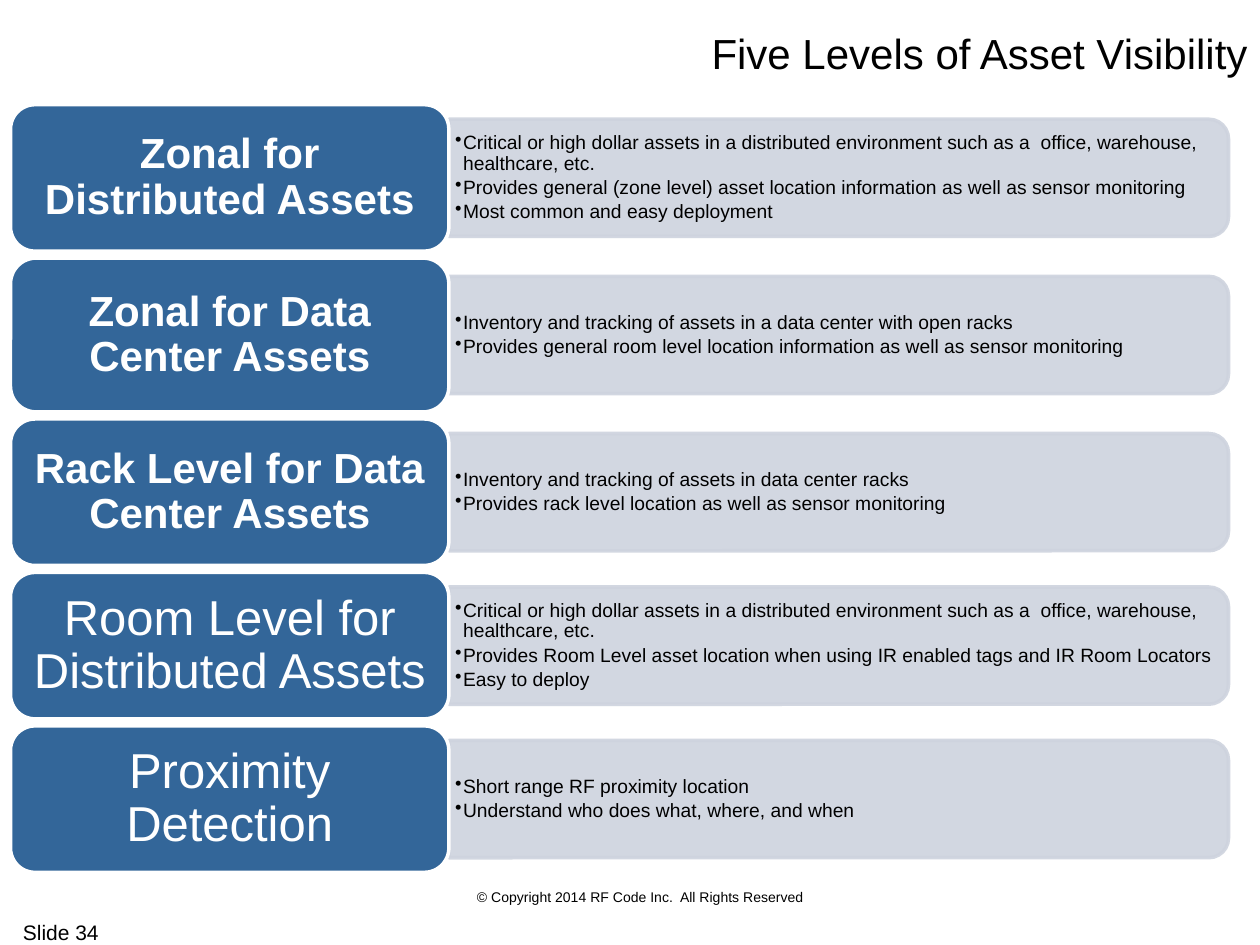
import pptx
import pptx.dml.color
import pptx.enum.shapes
import pptx.enum.text
import pptx.oxml.ns
import pptx.util
from lxml import etree

Pt = pptx.util.Pt
SHAPES = pptx.enum.shapes.MSO_SHAPE
ALIGN = pptx.enum.text.PP_ALIGN
ANCHOR = pptx.enum.text.MSO_ANCHOR
qn = pptx.oxml.ns.qn

CRITICAL = ("Critical or high dollar assets in a distributed environment "
            "such as a  office, warehouse, healthcare, etc.")
# heading, heading size, bold, box height, bullets
LEVELS = [
    ("Zonal for Distributed Assets", 24, True, 83.7, [
        CRITICAL,
        "Provides general (zone level) asset location information as well as sensor monitoring",
        "Most common and easy deployment"]),
    ("Zonal for Data Center Assets", 24, True, 87.9, [
        "Inventory and tracking of assets in a data center with open racks",
        "Provides general room level location information as well as sensor monitoring"]),
    ("Rack Level for Data Center Assets", 24, True, 83.7, [
        "Inventory and tracking of assets in data center racks",
        "Provides rack level location as well as sensor monitoring"]),
    ("Room Level for Distributed Assets", 28, False, 83.7, [
        CRITICAL,
        "Provides Room Level asset location when using IR enabled tags and IR Room Locators",
        "Easy to deploy"]),
    ("Proximity Detection", 28, False, 83.7, [
        "Short range RF proximity location",
        "Understand who does what, where, and when"]),
]
TOP, GAP = 59.8, 4
BOX_X, BOX_W = 6, 250.5
PANEL_X, PANEL_W, PANEL_H = 256.5, 445.5, 67


def rgb(value):
    return pptx.dml.color.RGBColor.from_string(value)


class Deck:
    font = "Arial"
    black, white, blue, grey = "000000", "FFFFFF", "336699", "CED3DE"

    def __init__(self, slide):
        self.s = slide

    def text(self, x, y, w, h, paragraphs, size, color=black, bold=False,
             align=ALIGN.LEFT, anchor=ANCHOR.TOP, inset=(7.2, 3.6),
             spacing=None, bullets=False):
        tf = self.s.shapes.add_textbox(Pt(x), Pt(y), Pt(w), Pt(h)).text_frame
        tf.word_wrap = True
        tf.vertical_anchor = anchor
        tf.margin_left = tf.margin_right = Pt(inset[0])
        tf.margin_top = tf.margin_bottom = Pt(inset[1])
        for i, words in enumerate(paragraphs):
            p = tf.add_paragraph() if i else tf.paragraphs[0]
            if bullets:
                self.bullet(p)
            p.alignment = align
            if spacing:
                p.line_spacing = spacing
            r = p.add_run()
            r.text = words
            r.font.name, r.font.size, r.font.bold = self.font, Pt(size), bold
            r.font.color.rgb = rgb(color)

    def bullet(self, p):
        p.level = 1
        pPr = p._p.get_or_add_pPr()
        pPr.set("marL", str(Pt(4.5)))
        pPr.set("indent", str(-Pt(4.5)))
        etree.SubElement(pPr, qn("a:buChar")).set("char", "•")
        p.space_after = Pt(2)

    def shape(self, kind, x, y, w, h, fill, line, opacity=None):
        sp = self.s.shapes.add_shape(kind, Pt(x), Pt(y), Pt(w), Pt(h))
        sp.shadow.inherit = False
        sp.fill.solid()
        sp.fill.fore_color.rgb = rgb(fill)
        sp.line.color.rgb = rgb(line)
        sp.line.width = Pt(2)
        if opacity:
            for clr in sp._element.spPr.iter(qn("a:srgbClr")):
                etree.SubElement(clr, qn("a:alpha")).set("val", str(opacity * 1000))
        return sp

    def panel(self, middle, bullets):
        """Grey panel rounded on its right side, centred on the height middle."""
        center = PANEL_X + PANEL_W / 2
        sp = self.shape(SHAPES.ROUND_2_SAME_RECTANGLE, center - PANEL_H / 2,
                        middle - PANEL_W / 2, PANEL_H, PANEL_W,
                        self.grey, self.grey, opacity=90)
        sp.rotation = 90
        self.text(PANEL_X, middle - 30.25, 442, 60.5, bullets, 11,
                  anchor=ANCHOR.MIDDLE, inset=(3.6, 1.5), spacing=0.9, bullets=True)

    def heading(self, y, h, words, size, bold):
        self.shape(SHAPES.ROUNDED_RECTANGLE, BOX_X, y, BOX_W, h, self.blue, self.white)
        inset = (7.2, 3.6) if bold else (8.4, 4.2)
        self.text(BOX_X + 4, y + 4, BOX_W - 8, h - 8, [words], size, self.white, bold,
                  ALIGN.CENTER, ANCHOR.MIDDLE, inset, spacing=0.9)


def main():
    prs = pptx.Presentation()
    prs.slide_width, prs.slide_height = Pt(720), Pt(540)
    deck = Deck(prs.slides.add_slide(prs.slide_layouts[6]))
    deck.text(246, 504, 240, 16.5, ["© Copyright 2014 RF Code Inc.  All Rights Reserved"],
              8, align=ALIGN.CENTER)
    deck.text(6, 522, 144, 21.6, ["Slide 34"], 12)
    deck.text(6, 12, 714, 36, ["Five Levels of Asset Visibility"], 24,
              align=ALIGN.RIGHT, anchor=ANCHOR.MIDDLE)
    y = TOP
    for words, size, bold, h, bullets in LEVELS:
        deck.panel(y + h / 2, bullets)
        deck.heading(y, h, words, size, bold)
        y += h + GAP
    prs.save("out.pptx")


if __name__ == "__main__":
    main()
